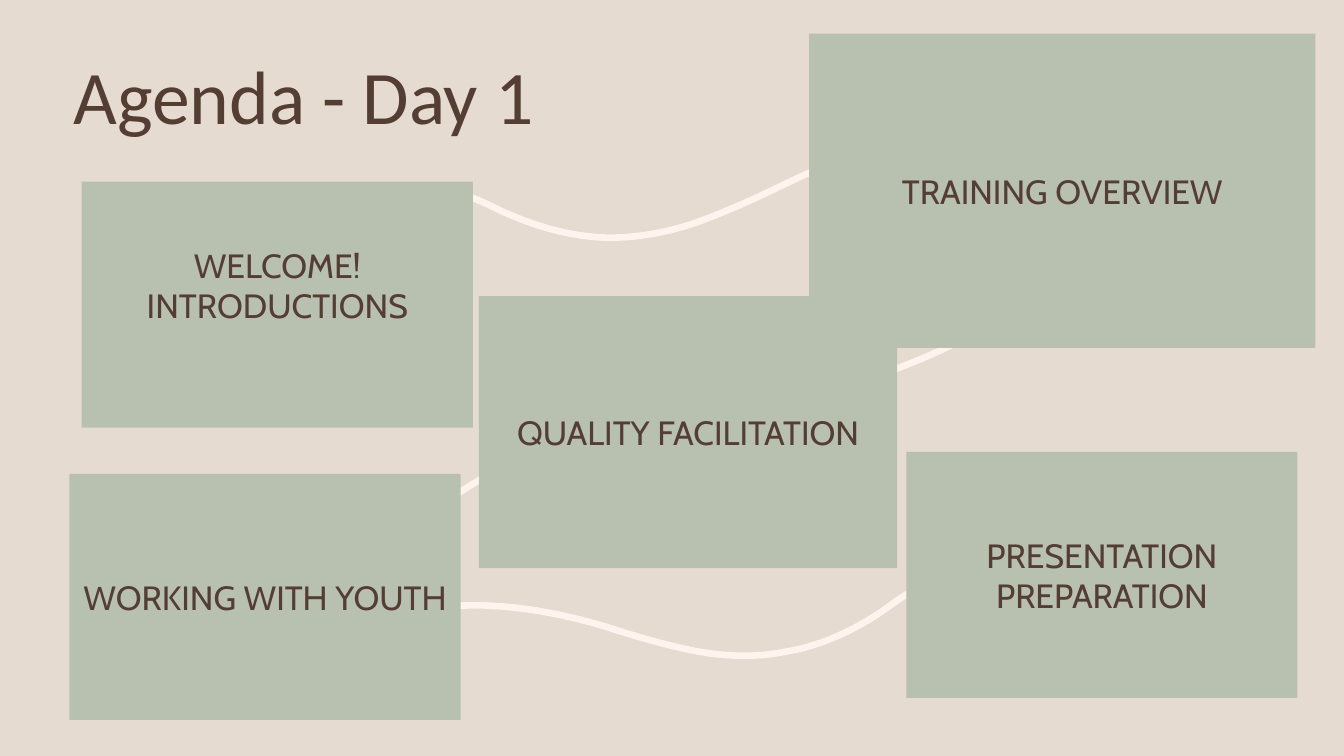
from pptx import Presentation
from pptx.dml.color import RGBColor
from pptx.enum.shapes import MSO_SHAPE
from pptx.enum.text import MSO_ANCHOR, MSO_AUTO_SIZE, PP_ALIGN
from pptx.util import Cm, Pt


def paint(fill, color):
    fill.solid()
    fill.fore_color.rgb = RGBColor.from_string(color)


def bezier(a, b, c, d, t):
    u = 1 - t
    return tuple(u**3 * p + 3 * u * u * t * q + 3 * u * t * t * r + t**3 * s
                 for p, q, r, s in zip(a, b, c, d))


class Agenda:
    paper, sage, cream, brown = "E6DBD0", "B8C0B0", "FEF3ED", "543E34"
    head, body = "Calibri", "Cabin"
    steps = 16

    def __init__(self, deck):
        self.slide = deck.slides.add_slide(deck.slide_layouts[5])
        paint(self.slide.background.fill, self.paper)

    def label(self, frame, lines, face, size, align):
        frame.word_wrap = True
        frame.auto_size = MSO_AUTO_SIZE.NONE
        frame.vertical_anchor = MSO_ANCHOR.MIDDLE
        frame.text = "\n".join(lines)
        for para in frame.paragraphs:
            para.alignment = align
            para.font.name = face
            para.font.size = Pt(size)
            paint(para.font.fill, self.brown)

    def title(self, text, left, top, width, height):
        shape = self.slide.shapes.title
        shape.left, shape.top = Cm(left), Cm(top)
        shape.width, shape.height = Cm(width), Cm(height)
        self.label(shape.text_frame, [text], self.head, 54, PP_ALIGN.LEFT)
        shape.text_frame.paragraphs[0].line_spacing = 0.9

    def curve(self, points):
        track = [points[0]]
        for i in range(0, len(points) - 1, 3):
            track += [bezier(*points[i:i + 4], n / self.steps)
                      for n in range(1, self.steps + 1)]
        track = [(Cm(x), Cm(y)) for x, y in track]
        pen = self.slide.shapes.build_freeform(*track[0])
        pen.add_line_segments(track[1:], close=False)
        shape = pen.convert_to_shape()
        shape.shadow.inherit = False
        shape.fill.background()
        paint(shape.line.fill, self.cream)
        shape.line.width = Pt(4.75)

    def box(self, lines, left, top, width=9.86, height=6.2, lift=0):
        shape = self.slide.shapes.add_shape(
            MSO_SHAPE.RECTANGLE, Cm(left), Cm(top), Cm(width), Cm(height))
        shape.shadow.inherit = False
        paint(shape.fill, self.sage)
        shape.line.fill.background()
        frame = shape.text_frame
        self.label(frame, lines, self.body, 24, PP_ALIGN.CENTER)
        frame.margin_bottom = Cm(0.13 + lift)


def main():
    deck = Presentation()
    deck.slide_width, deck.slide_height = Cm(33.87), Cm(19.05)
    page = Agenda(deck)
    curves = [
        [(21.16, 9.73), (23.19, 9.22), (25.02, 8.31), (26.59, 6.99)],
        [(14.83, 10.87), (12.93, 11.48), (11.3, 12.45), (9.88, 13.69)],
        [(7.8, 5.66), (8.89, 4.75), (10.11, 4.5), (11.4, 4.83),
         (11.84, 4.93), (12.22, 5.11), (12.62, 5.31),
         (13.46, 5.69), (14.35, 5.97), (15.34, 5.99),
         (16.18, 5.99), (17.02, 5.82), (17.81, 5.51),
         (18.72, 5.16), (19.23, 4.9), (19.76, 4.65),
         (20.4, 4.34), (23.88, 2.62), (26.09, 3.71)],
        [(23.37, 14.71), (22.96, 14.88), (22.63, 15.11), (22.28, 15.37),
         (21.54, 15.88), (20.7, 16.28), (19.76, 16.43),
         (18.95, 16.59), (18.14, 16.54), (17.3, 16.36),
         (16.38, 16.15), (15.85, 15.98), (15.29, 15.8),
         (14.68, 15.62), (11.02, 14.48), (8.81, 16.15)],
    ]
    for points in curves:
        page.curve(points)
    page.box(["TRAINING OVERVIEW"], 20.39, 0.85, 12.76, 7.92)
    page.box(["WELCOME!", "INTRODUCTIONS"], 2.06, 4.58, lift=1)
    page.box(["QUALITY FACILITATION"], 12.07, 7.46, 10.54, 6.86)
    page.box(["PRESENTATION PREPARATION"], 22.84, 11.39)
    page.box(["WORKING WITH YOUTH"], 1.75, 11.94)
    page.title("Agenda - Day 1", 1.6, 0.92, 15.6, 3.22)
    deck.save("out.pptx")


if __name__ == "__main__":
    main()
